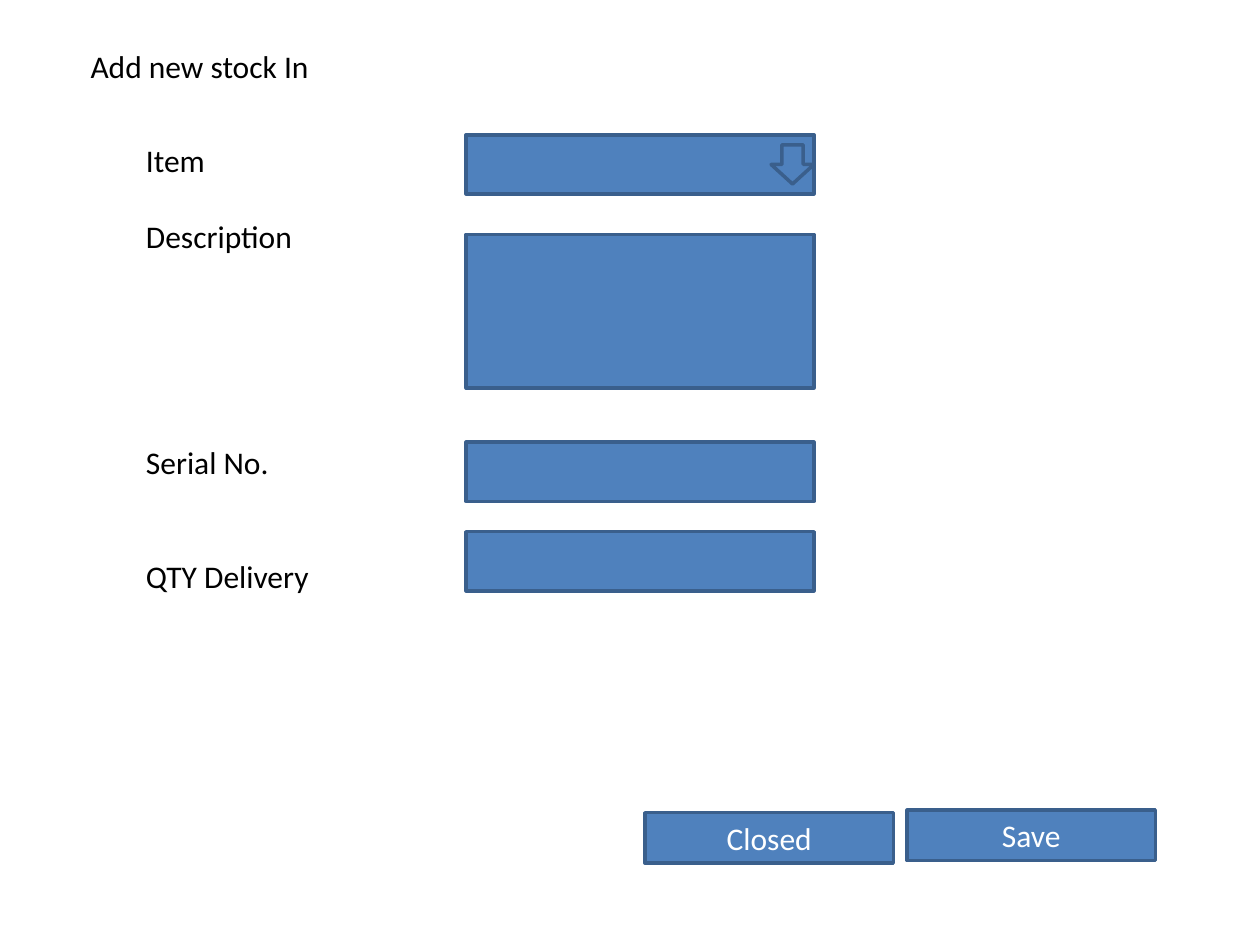
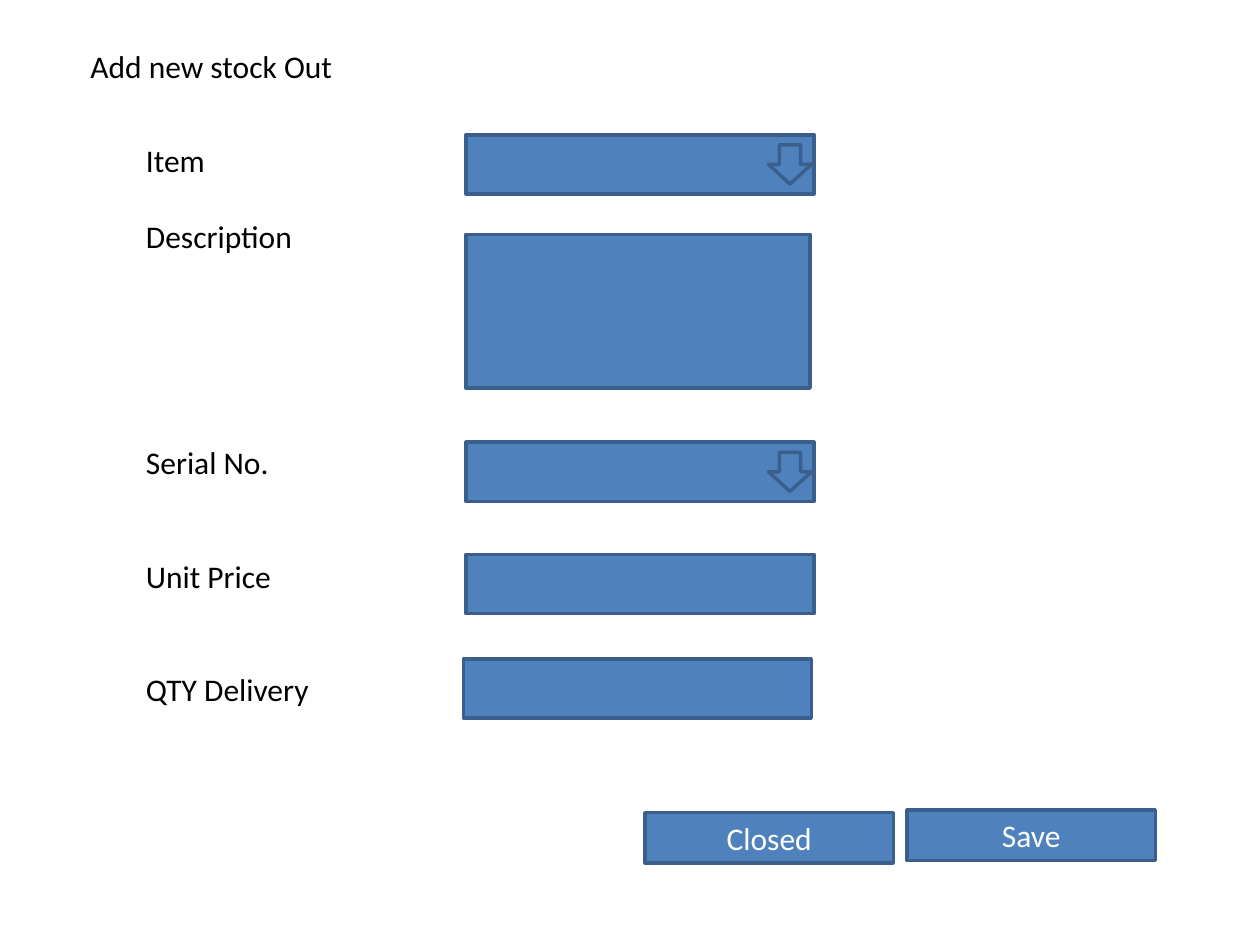
from dataclasses import dataclass

from pptx import Presentation, util as u
from pptx.dml.color import RGBColor
from pptx.enum import shapes, text


@dataclass(frozen=True)
class Theme:
    font: str = "Calibri"
    size: float = 18
    line_pitch: float = 21.6
    ink: str = "000000"
    button_ink: str = "FFFFFF"
    fill: str = "4F81BD"
    outline: str = "3A5F8C"
    outline_width: float = 2


theme = Theme()
deck = Presentation()
deck.slide_width, deck.slide_height = u.Inches(10), u.Inches(7.5)

# All lengths are percentages of the slide's width and height.
FIELD_LEFT, FIELD_WIDTH, FIELD_HEIGHT = 37, 27.6, 6.27
FORM_TOP, LINE_HEIGHT, LABEL_PADDING = 14.27, 4, 1.87
ARROW_DROP, ARROW_WIDTH, ARROW_HEIGHT = 1.07, 3.4, 4.13
BUTTON_WIDTH, BUTTON_HEIGHT = 19.7, 5.33
BUTTONS = [("Save", 72, 85.73), ("Closed", 51.2, 86)]

# Labels: wording and blank lines above it.
# Fields: left, top, width, height, has a drop-down arrow.
FORMS = [
    {
        "title": "Add new stock In",
        "title_width": 19.5,
        "labels": [("Item", 0), ("Description", 1), ("Serial No.", 5), ("QTY Delivery", 2)],
        "fields": [
            (FIELD_LEFT, FORM_TOP, FIELD_WIDTH, FIELD_HEIGHT, True),
            (FIELD_LEFT, 24.8, FIELD_WIDTH, 16.27, False),
            (FIELD_LEFT, 46.8, FIELD_WIDTH, FIELD_HEIGHT, False),
            (FIELD_LEFT, 56.27, FIELD_WIDTH, FIELD_HEIGHT, False),
        ],
        "arrow_left": 61.2,
    },
    {
        "title": "Add new stock Out",
        "title_width": 21.4,
        "labels": [("Item", 0), ("Description", 1), ("Serial No.", 5),
                   ("Unit Price", 2), ("QTY Delivery", 2)],
        "fields": [
            (FIELD_LEFT, FORM_TOP, FIELD_WIDTH, FIELD_HEIGHT, True),
            (FIELD_LEFT, 24.8, 27.3, 16.27, False),
            (FIELD_LEFT, 46.8, FIELD_WIDTH, FIELD_HEIGHT, True),
            (FIELD_LEFT, 58.67, FIELD_WIDTH, FIELD_HEIGHT, False),
            (36.8, 69.73, FIELD_WIDTH, FIELD_HEIGHT, False),
        ],
        "arrow_left": 61,
    },
]


def add_box(page, left, top, width, height, preset=None):
    """Add a themed preset shape, or a text box if no preset is given."""
    area = (int(deck.slide_width * left / 100), int(deck.slide_height * top / 100),
            int(deck.slide_width * width / 100), int(deck.slide_height * height / 100))
    if preset is None:
        box = page.shapes.add_textbox(*area)
        box.text_frame.word_wrap = False
        box.text_frame.auto_size = text.MSO_AUTO_SIZE.SHAPE_TO_FIT_TEXT
        return box
    box = page.shapes.add_shape(preset, *area)
    box.shadow.inherit = False
    box.fill.solid()
    box.fill.fore_color.rgb = RGBColor.from_string(theme.fill)
    box.line.color.rgb = RGBColor.from_string(theme.outline)
    box.line.width = u.Pt(theme.outline_width)
    return box


def write(para, wording, colour):
    span = para.add_run()
    span.text = wording
    span.font.name = theme.font
    span.font.size = u.Pt(theme.size)
    span.font.color.rgb = RGBColor.from_string(colour)


for form in FORMS:
    page = deck.slides.add_slide(deck.slide_layouts[6])

    title = add_box(page, 6.2, 4.27, form["title_width"], 5.33)
    write(title.text_frame.paragraphs[0], form["title"], theme.ink)

    line_count = sum(gap + 1 for _, gap in form["labels"])
    labels = add_box(page, 10.6, FORM_TOP, 15.1, line_count * LINE_HEIGHT + LABEL_PADDING)
    for index, (wording, gap) in enumerate(form["labels"]):
        frame = labels.text_frame
        para = frame.add_paragraph() if index else frame.paragraphs[0]
        para.space_before = u.Pt(gap * theme.line_pitch)
        write(para, wording, theme.ink)

    for left, top, width, height, has_arrow in form["fields"]:
        add_box(page, left, top, width, height, shapes.MSO_SHAPE.RECTANGLE)
        if has_arrow:
            add_box(page, form["arrow_left"], top + ARROW_DROP, ARROW_WIDTH, ARROW_HEIGHT,
                    shapes.MSO_SHAPE.DOWN_ARROW)

    for wording, left, top in BUTTONS:
        button = add_box(page, left, top, BUTTON_WIDTH, BUTTON_HEIGHT,
                         shapes.MSO_SHAPE.RECTANGLE)
        button.text_frame.vertical_anchor = text.MSO_ANCHOR.MIDDLE
        para = button.text_frame.paragraphs[0]
        para.alignment = text.PP_ALIGN.CENTER
        write(para, wording, theme.button_ink)

deck.save("out.pptx")
